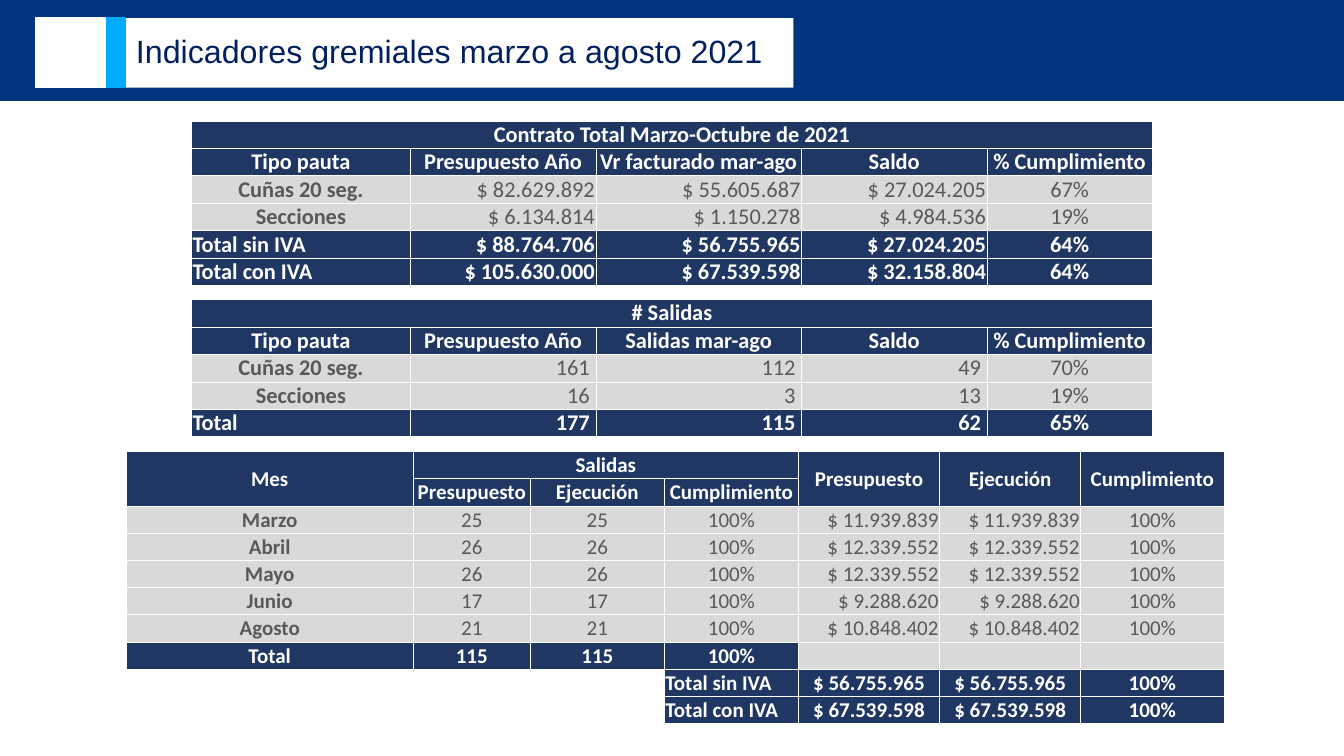
from lxml.etree import SubElement
from pptx import Presentation
from pptx.dml.color import RGBColor
from pptx.enum.shapes import MSO_SHAPE as SHAPE
from pptx.enum.text import MSO_ANCHOR as ANCHOR, PP_ALIGN as ALIGN
from pptx.oxml.ns import qn
from pptx.util import Inches, Pt

NAVY, GREY, WHITE, TEXT = "203764", "D9D9D9", "FFFFFF", "595959"
BLUE, CYAN, TITLE_INK = "003381", "00ACFF", "002060"
ALIGNS = {"l": ALIGN.LEFT, "c": ALIGN.CENTER, "r": ALIGN.RIGHT}
ROW, GAP, BORDER = 0.27, 0.14, 0.5

TITLE = "Indicadores gremiales marzo a agosto 2021"
BANDS = [  # left, top, width, height, shape, colour, line width
    (0, -0.01, 13.33, 1.01, SHAPE.FLOWCHART_PROCESS, BLUE, 1),
    (1.04, 0.18, 0.2, 0.69, SHAPE.RECTANGLE, CYAN, 1),
    (0.35, 0.18, 0.69, 0.69, SHAPE.RECTANGLE, WHITE, 1),
    (1.25, 0.18, 6.62, 0.69, SHAPE.RECTANGLE, WHITE, 0),
]

# Each row: kind, alignment of its cells, values.
# None leaves a cell without fill; "" is an empty grey cell.
MONTHS = [
    ("Marzo", "25", "$ 11.939.839"),
    ("Abril", "26", "$ 12.339.552"),
    ("Mayo", "26", "$ 12.339.552"),
    ("Junio", "17", "$ 9.288.620"),
    ("Agosto", "21", "$ 10.848.402"),
]
MONTHLY = dict(
    at=(1.25, 4.48), size=15, inset=0.01,
    cols=[1.16, 1.69, 1.16, 1.33, 1.33, 1.4, 1.4, 1.42],
    rows=[
        ("head", "cccccccc", ["Mes", None, "Salidas", None, None,
                              "Presupuesto", "Ejecución", "Cumplimiento"]),
        ("head", "cccccccc", [None, None, "Presupuesto", "Ejecución",
                              "Cumplimiento", None, None, None]),
        *[("body", "cccccrrc", [month, None, count, count, "100%", money, money, "100%"])
          for month, count, money in MONTHS],
        ("head", "cccccccc", ["Total", None, "115", "115", "100%", "", "", ""]),
        *[("head", "cccclccc", [None] * 4 + [label, money, money, "100%"])
          for label, money in [("Total sin IVA", "$ 56.755.965"),
                               ("Total con IVA", "$ 67.539.598")]],
    ],
    merges=[(0, 0, 1, 1), (0, 2, 0, 4), *[(0, c, 1, c) for c in (5, 6, 7)],
            *[(r, 0, r, 1) for r in range(2, 8)]],
)
CONTRACT = dict(
    at=(1.9, 1.2), size=16, inset=0,
    cols=[2.17, 1.84, 2.04, 1.84, 1.64],
    rows=[
        ("head", "ccccc", ["Contrato Total Marzo-Octubre de 2021"] + [None] * 4),
        ("head", "ccccc", ["Tipo pauta", "Presupuesto Año", "Vr facturado mar-ago",
                           "Saldo", "% Cumplimiento"]),
        ("body", "crrrc", ["Cuñas 20 seg.", "$ 82.629.892", "$ 55.605.687",
                           "$ 27.024.205", "67%"]),
        ("body", "crrrc", ["Secciones", "$ 6.134.814", "$ 1.150.278", "$ 4.984.536", "19%"]),
        ("head", "lrrrc", ["Total sin IVA", "$ 88.764.706", "$ 56.755.965",
                           "$ 27.024.205", "64%"]),
        ("head", "lrrrc", ["Total con IVA", "$ 105.630.000", "$ 67.539.598",
                           "$ 32.158.804", "64%"]),
        ("gap", "ccccc", [None] * 5),
        ("head", "ccccc", ["# Salidas"] + [None] * 4),
        ("head", "ccccc", ["Tipo pauta", "Presupuesto Año", "Salidas mar-ago",
                           "Saldo", "% Cumplimiento"]),
        ("body", "crrrc", ["Cuñas 20 seg.", "161", "112", "49", "70%"]),
        ("body", "crrrc", ["Secciones", "16", "3", "13", "19%"]),
        ("head", "lrrrc", ["Total", "177", "115", "62", "65%"]),
    ],
    merges=[(0, 0, 0, 4), (7, 0, 7, 4)],
)


def rgb(color):
    return RGBColor.from_string(color)


def write(tf, text, size, color, font="Calibri", bold=False, align="l", spacing=None):
    p = tf.paragraphs[0]
    p.alignment = ALIGNS[align]
    p.line_spacing = spacing
    if not text:  # keeps empty cells from stretching their row
        SubElement(p._p, qn("a:endParaRPr"), sz="600")
        return
    r = p.add_run()
    r.text = text
    r.font.size, r.font.name, r.font.bold = Pt(size), font, bold
    r.font.color.rgb = rgb(color)


def add_band(slide, left, top, width, height, shape, color, line):
    s = slide.shapes.add_shape(shape, *map(Inches, (left, top, width, height)))
    s.shadow.inherit = False
    s.fill.solid()
    s.fill.fore_color.rgb = rgb(color)
    if line:
        s.line.color.rgb = rgb(color)
        s.line.width = Pt(line)
    else:
        s.line.fill.background()
    return s


def add_borders(cell):
    tc_pr = cell._tc.get_or_add_tcPr()
    for side in "LRTB":
        ln = SubElement(tc_pr, qn("a:ln" + side), w=str(Pt(BORDER)))
        fill = SubElement(ln, qn("a:solidFill"))
        SubElement(fill, qn("a:srgbClr"), val=WHITE)


def fill_cell(cell, kind, col, value, align, size, inset):
    cell.vertical_anchor = ANCHOR.MIDDLE
    cell.margin_left = cell.margin_right = Inches(0.01)
    cell.margin_top, cell.margin_bottom = Inches(inset), 0
    if align == "r" and value.isdigit():
        cell.margin_right = Inches(0.06)
    add_borders(cell)
    if value is None:
        cell.fill.background()
    else:
        cell.fill.solid()
        cell.fill.fore_color.rgb = rgb(NAVY if kind == "head" and value else GREY)
    head = kind == "head"
    write(cell.text_frame, value, size, WHITE if head else TEXT,
          bold=head or col == 0, align=align)


def add_grid(slide, at, size, inset, cols, rows, merges):
    heights = [GAP if kind == "gap" else ROW for kind, _, _ in rows]
    box = map(Inches, (*at, sum(cols), sum(heights)))
    table = slide.shapes.add_table(len(rows), len(cols), *box).table
    table.first_row = table.horz_banding = False
    for column, width in zip(table.columns, cols):
        column.width = Inches(width)
    for r, (kind, aligns, values) in enumerate(rows):
        table.rows[r].height = Inches(heights[r])
        for c, (value, align) in enumerate(zip(values, aligns)):
            fill_cell(table.cell(r, c), kind, c, value, align, size, inset)
    for top, left, bottom, right in merges:
        table.cell(top, left).merge(table.cell(bottom, right))


def main():
    prs = Presentation()
    prs.slide_width, prs.slide_height = Inches(13.33), Inches(7.5)
    slide = prs.slides.add_slide(prs.slide_layouts[6])
    for band in BANDS:
        s = add_band(slide, *band)
    tf = s.text_frame  # the last band holds the title
    tf.word_wrap = True
    tf.vertical_anchor = ANCHOR.MIDDLE
    write(tf, TITLE, 23, TITLE_INK, font="Arial", spacing=0.9)
    for grid in (MONTHLY, CONTRACT):
        add_grid(slide, **grid)
    prs.save("out.pptx")


if __name__ == "__main__":
    main()
